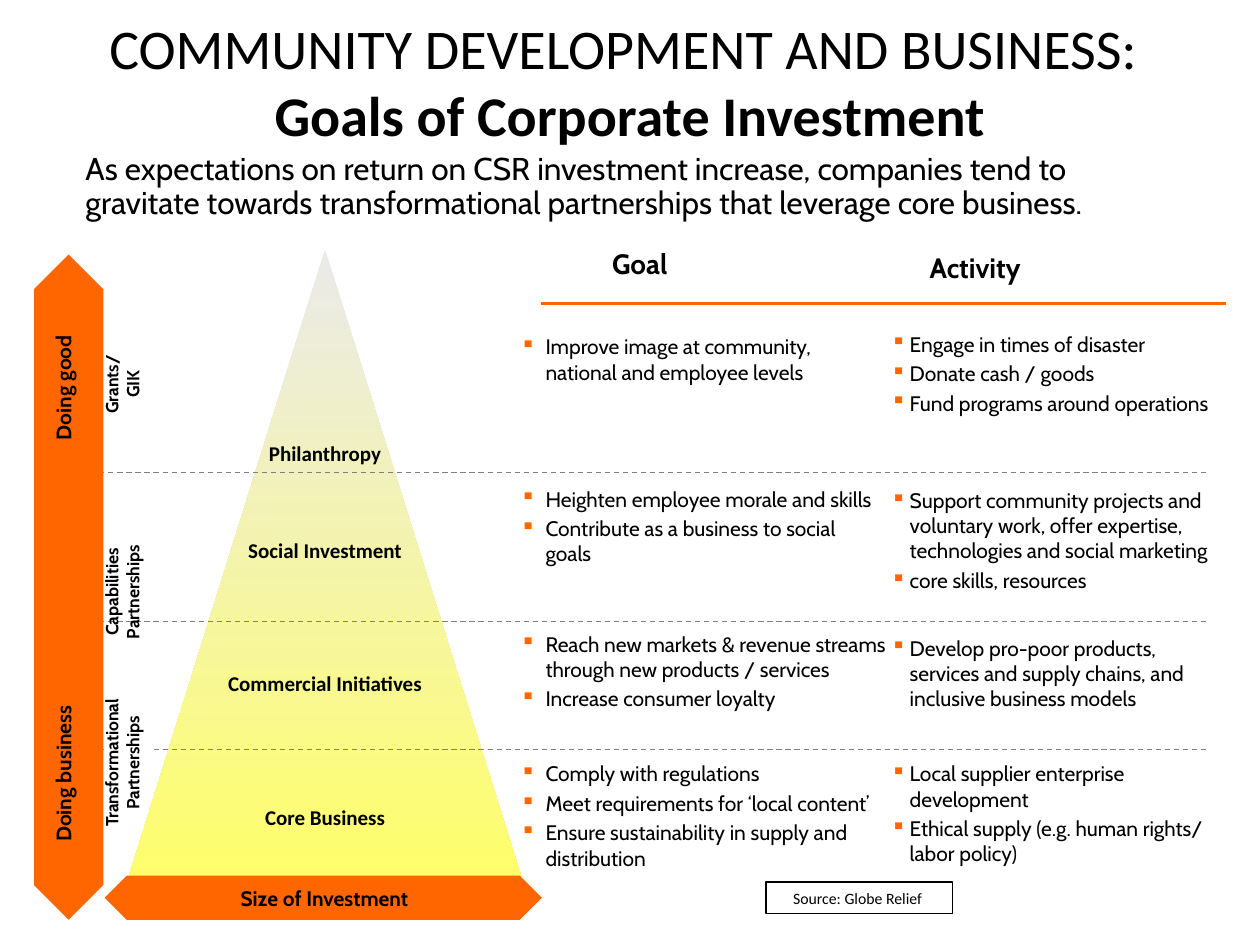
from lxml import etree
from pptx import Presentation
from pptx import util as u
from pptx.dml.color import RGBColor
from pptx.enum import dml, shapes, text
from pptx.oxml.ns import qn

ORANGE, BLACK, WHITE, GREY = "FF6600", "000000", "FFFFFF", "808080"
GOAL_X, ACTIVITY_X, PYRAMID_AXIS = 4.13, 6.57, 2.58
STAGES = [
    ("Philanthropy", 3.45, 1.36,
     (2.65, 2.6, ["Improve image at community, national and employee levels"]),
     (2.63, 3.23, ["Engage in times of disaster", "Donate cash / goods",
                   "Fund programs around operations"])),
    ("Social Investment", 4.22, 1.75,
     (3.86, 2.8, ["Heighten employee morale and skills",
                  "Contribute as a business to social goals"]),
     (3.87, 3.12, ["Support community projects and voluntary work, offer expertise, "
                   "technologies and social marketing", "core skills, resources"])),
    ("Commercial Initiatives", 5.27, 1.97,
     (5.01, 3.07, ["Reach new markets & revenue streams through new products / services",
                   "Increase consumer loyalty"]),
     (5.04, 2.92, ["Develop pro-poor products, services and supply chains, "
                   "and inclusive business models"])),
    ("Core Business", 6.34, 1.68,
     (6.04, 2.99, ["Comply with regulations", "Meet requirements for ‘local content’",
                   "Ensure sustainability in supply and distribution"]),
     (6.04, 3.31, ["Local supplier enterprise development",
                   "Ethical supply (e.g. human rights/ labor policy)"])),
]
SIDE_LABELS = [
    ("Capabilities Partnerships", 0.75, 3.61, 0.53, 1.56, 10),
    ("Grants/ GIK", 0.75, 2.52, 0.53, 0.86, 10),
    ("Transformational Partnerships", 0.75, 5.24, 0.53, 1.42, 10),
    ("Doing good", 0.35, 2.55, 0.4, 1.04, 12),
    ("Doing business", 0.35, 5.4, 0.4, 1.38, 12),
]


def color(value):
    """Turn a hex string into a colour."""
    return RGBColor.from_string(value)


def inches(*lengths):
    """Turn plain numbers into lengths."""
    return [u.Inches(length) for length in lengths]


def style(font, size, name="Cabin", bold=False):
    """Set the face, size and weight of black text."""
    font.name, font.size, font.bold = name, u.Pt(size), bold
    font.color.rgb = color(BLACK)


def add_text(page, words, place, size, name="Cabin", bold=False, centred=False,
             before=0, wrap=True):
    """Add a one-paragraph text box that grows with its text."""
    box = page.shapes.add_textbox(*inches(*place))
    frame = box.text_frame
    frame.word_wrap = wrap
    frame.auto_size = text.MSO_AUTO_SIZE.SHAPE_TO_FIT_TEXT
    para = frame.paragraphs[0]
    para.text = words
    para.alignment = text.PP_ALIGN.CENTER if centred else text.PP_ALIGN.LEFT
    para.space_before = u.Pt(before * size)
    style(para.font, size, name, bold)
    return box


def add_bullet(para, margin, hang):
    """Give a paragraph a hanging orange square."""
    props = para._p.get_or_add_pPr()
    props.set("marL", str(u.Inches(margin)))
    props.set("indent", str(-u.Inches(hang)))
    tint = etree.SubElement(props, qn("a:buClr"))
    etree.SubElement(tint, qn("a:srgbClr"), val=ORANGE)
    etree.SubElement(props, qn("a:buChar"), char="▪")


def add_list(page, left, top, width, items, level):
    """Add a bulleted list without inner margins."""
    box = page.shapes.add_textbox(*inches(left, top, width, 0.22 * len(items)))
    frame = box.text_frame
    frame.word_wrap = True
    frame.auto_size = text.MSO_AUTO_SIZE.SHAPE_TO_FIT_TEXT
    frame.margin_left = frame.margin_right = frame.margin_top = frame.margin_bottom = 0
    for index, item in enumerate(items):
        para = frame.add_paragraph() if index else frame.paragraphs[0]
        para.text, para.level = item, level
        para.space_before = u.Pt(2.4)
        add_bullet(para, *((0.65, 0.15) if level else (0.2, 0.2)))
        style(para.font, 12)


def add_block(page, kind, place, fill, line=None):
    """Add a flat preset shape."""
    block = page.shapes.add_shape(kind, *inches(*place))
    block.shadow.inherit = False
    block.fill.solid()
    block.fill.fore_color.rgb = color(fill)
    if line:
        block.line.color.rgb = color(line)
        block.line.width = u.Pt(0.75)
    else:
        block.line.fill.background()
    return block


def add_rule(page, left, right, y, tint, width, dashed=False):
    """Add a level line."""
    rule = page.shapes.add_connector(shapes.MSO_CONNECTOR.STRAIGHT,
                                     *inches(left, y, right, y))
    rule.line.color.rgb = color(tint)
    rule.line.width = u.Pt(width)
    if dashed:
        rule.line.dash_style = dml.MSO_LINE.DASH
    etree.SubElement(rule._element.spPr, qn("a:effectLst"))


def add_double_arrow(page, place, head, rotation=0):
    """Add an orange two-headed arrow."""
    arrow = add_block(page, shapes.MSO_SHAPE.UP_DOWN_ARROW, place, ORANGE)
    arrow.adjustments[0], arrow.adjustments[1] = 0.5, head
    arrow.rotation = rotation


def add_side_label(page, words, left, top, width, height, size):
    """Add bold text that reads upwards."""
    box = add_text(page, words, (left, top, width, height), size, bold=True,
                   centred=True, before=0.5)
    box.rotation = 180
    box.text_frame._txBody.bodyPr.set("vert", "eaVert")


def add_pyramid(page):
    """Add the triangle shaded from grey to yellow."""
    pyramid = add_block(page, shapes.MSO_SHAPE.ISOSCELES_TRIANGLE,
                        (0.95, 1.98, 3.26, 5.21), WHITE)
    pyramid.fill.gradient()
    pyramid.fill.gradient_angle = 270
    for stop, (position, tint) in zip(pyramid.fill.gradient_stops,
                                      [(0, "EAEAEA"), (1, "FFFF66")]):
        stop.position, stop.color.rgb = position, color(tint)


def add_title(page):
    """Place and format the two-line title."""
    title = page.shapes.title
    title.left, title.top, title.width, title.height = inches(0.5, 0.25, 9, 0.78)
    frame = title.text_frame
    frame.word_wrap = True
    frame.auto_size = text.MSO_AUTO_SIZE.NONE
    frame.vertical_anchor = text.MSO_ANCHOR.MIDDLE
    para = frame.paragraphs[0]
    para.alignment = text.PP_ALIGN.CENTER
    for index, words in enumerate(["COMMUNITY DEVELOPMENT AND BUSINESS: ",
                                   "Goals of Corporate Investment"]):
        if index:
            para.add_line_break()
        span = para.add_run()
        span.text = words
        style(span.font, 32, "Calibri", bold=bool(index))


def add_source(page):
    """Add the framed source note."""
    box = add_block(page, shapes.MSO_SHAPE.RECTANGLE, (6.08, 7, 1.48, 0.25), WHITE, BLACK)
    box.text_frame.word_wrap = False
    box.text_frame.vertical_anchor = text.MSO_ANCHOR.MIDDLE
    para = box.text_frame.paragraphs[0]
    para.text = "Source: Globe Relief "
    para.alignment = text.PP_ALIGN.CENTER
    style(para.font, 9, "Calibri")


def main():
    """Build the slide and save it."""
    deck = Presentation()
    deck.slide_width, deck.slide_height = inches(10, 7.5)
    page = deck.slides.add_slide(deck.slide_layouts[5])
    add_title(page)
    intro = add_text(page, "As expectations on return on CSR investment increase, companies "
                     "tend to gravitate towards transformational partnerships that leverage "
                     "core business.", (0.58, 1.17, 8.92, 0.72), 18, before=0.2)
    intro.text_frame.paragraphs[0].line_spacing = 0.9
    add_source(page)
    add_pyramid(page)
    for y in (3.75, 4.93, 5.95):
        add_rule(page, 0.43, 9.57, y, GREY, 0.75, dashed=True)
    add_rule(page, 4.29, 9.73, 2.41, ORANGE, 2)
    add_text(page, "Goal", (4.76, 1.91, 0.7, 0.37), 16, bold=True, wrap=False)
    add_text(page, "Activity", (7.28, 1.94, 1.01, 0.37), 16, bold=True, wrap=False)
    for name, top, width, goals, activities in STAGES:
        add_text(page, name, (PYRAMID_AXIS - width / 2, top, width, 0.3), 12, "Calibri",
                 bold=True, centred=True, before=0.5)
        add_list(page, GOAL_X, *goals, level=0)
        add_list(page, ACTIVITY_X, *activities, level=1)
    add_double_arrow(page, (2.39, 5.39, 0.35, 3.47), 2.01, rotation=90)
    add_text(page, "Size of Investment", (1.53, 6.98, 2.09, 0.3), 12, bold=True,
             centred=True, before=0.5)
    add_block(page, shapes.MSO_SHAPE.RECTANGLE, (0.83, 5.8, 0.39, 0.24), WHITE, WHITE)
    add_double_arrow(page, (0.27, 2.02, 0.55, 5.28), 1.91)
    for label in SIDE_LABELS:
        add_side_label(page, *label)
    deck.save("out.pptx")


if __name__ == "__main__":
    main()
